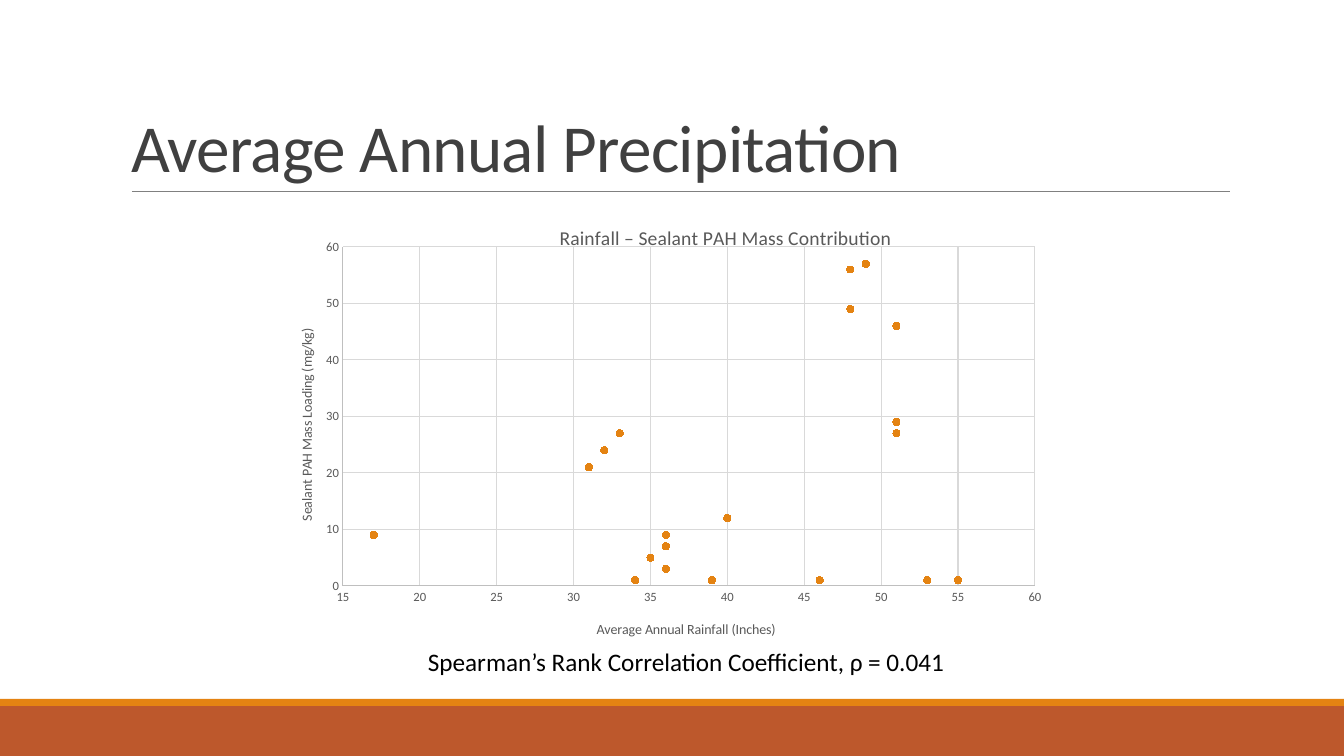
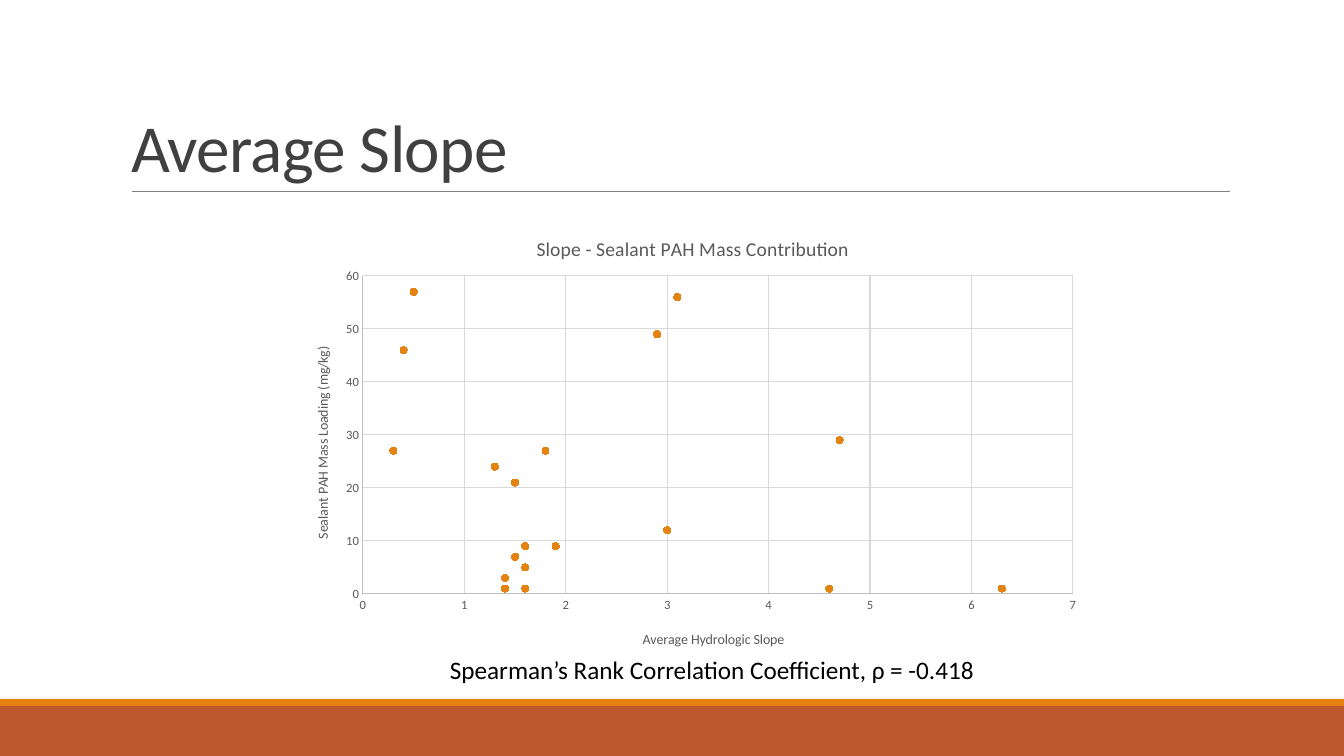
"""Build two slides that set sealant PAH loading against rainfall and slope."""
from lxml import etree
from pptx import Presentation
from pptx.chart.data import XyChartData
from pptx.dml.color import RGBColor
from pptx.enum.chart import XL_CHART_TYPE, XL_MARKER_STYLE, XL_TICK_MARK
from pptx.enum.shapes import MSO_CONNECTOR, MSO_SHAPE
from pptx.enum.text import MSO_ANCHOR, MSO_AUTO_SIZE, PP_ALIGN
from pptx.oxml.ns import qn
from pptx.util import Emu, Pt

SCATTER = XL_CHART_TYPE.XY_SCATTER
CIRCLE = XL_MARKER_STYLE.CIRCLE
NO_TICK = XL_TICK_MARK.NONE
STRAIGHT = MSO_CONNECTOR.STRAIGHT
RECTANGLE = MSO_SHAPE.RECTANGLE
BOTTOM = MSO_ANCHOR.BOTTOM
FIXED = MSO_AUTO_SIZE.NONE
GROW = MSO_AUTO_SIZE.SHAPE_TO_FIT_TEXT
LEFT = PP_ALIGN.LEFT

EMU_PER_PX = 914400 / 100.8
WIDTH, HEIGHT = 1344, 756
CHART_WIDTH, CHART_HEIGHT = 806, 454
TITLE_ONLY = 5

FONT = "Calibri"
RUST, ORANGE, RULE = "BD582C", "E48312", "808080"
HEADING, LABEL, BLACK = "404040", "595959", "000000"
AXIS, GRID = "BFBFBF", "D9D9D9"

LOADING = [12, 1, 49, 3, 21, 46, 5, 9, 7, 56, 57, 1, 27, 27, 24, 9, 1, 1, 1, 29]
RAINFALL = [40, 55, 48, 36, 31, 51, 35, 36, 36, 48, 49, 53, 33, 51, 32, 17, 46, 39, 34, 51]
SLOPE = [3, 4.6, 2.9, 1.4, 1.5, 0.4, 1.6, 1.9, 1.5, 3.1,
         0.5, 6.3, 1.8, 0.3, 1.3, 1.6, 6.3, 1.4, 1.6, 4.7]

STUDIES = [
    {
        "heading": "Average Annual Precipitation",
        "origin": (288, 204),
        "plot": (343, 247, 692, 339),
        "chart_title": ("Rainfall – Sealant PAH Mass Contribution", (556, 221)),
        "x_title": ("Average Annual Rainfall (Inches)", (594, 618)),
        "y_title": ("Sealant PAH Mass Loading (mg/kg)", (295, 326)),
        "x_scale": (15, 60, 5),
        "factor": RAINFALL,
        "caption": "Spearman’s Rank Correlation Coefficient, ρ = 0.041",
        "caption_at": (418, 641),
    },
    {
        "heading": "Average Slope",
        "origin": (287, 212),
        "plot": (363, 276, 710, 318),
        "chart_title": ("Slope - Sealant PAH Mass Contribution", (533, 232)),
        "x_title": ("Average Hydrologic Slope", (640, 628)),
        "y_title": ("Sealant PAH Mass Loading (mg/kg)", (311, 344)),
        "x_scale": (0, 7, 1),
        "factor": SLOPE,
        "caption": "Spearman’s Rank Correlation Coefficient, ρ = -0.418",
        "caption_at": (440, 649),
    },
]


def px(length):
    """Turn pixels into EMU."""
    return Emu(round(length * EMU_PER_PX))


def rgb(value):
    """Turn a hex string into a colour."""
    return RGBColor.from_string(value)


def manual_layout(parent, index, **settings):
    """Give a chart part a fixed layout."""
    for previous in parent.findall(qn("c:layout")):
        parent.remove(previous)
    layout = etree.Element(qn("c:layout"))
    manual = etree.SubElement(layout, qn("c:manualLayout"))
    for tag, value in settings.items():
        etree.SubElement(manual, qn(f"c:{tag}")).set("val", str(value))
    parent.insert(index, layout)


class Deck:
    """Hold the style and the current slide."""

    def __init__(self):
        """Open a presentation of the right size."""
        self.presentation = Presentation()
        self.presentation.slide_width = px(WIDTH)
        self.presentation.slide_height = px(HEIGHT)
        self.slide = None

    def start_slide(self, heading):
        """Add a slide with its bands, rule and title."""
        layout = self.presentation.slide_layouts[TITLE_ONLY]
        self.slide = self.presentation.slides.add_slide(layout)
        self.band(706, 50, RUST)
        self.band(699, 7, ORANGE)
        self.rule(132, 1230, 191)
        self.heading(heading)

    def styled_run(self, paragraph, text, size, color):
        """Add one styled run to a paragraph."""
        run = paragraph.add_run()
        run.text = text
        self.style(run.font, size, color)
        return run

    def style(self, font, size, color):
        """Set the shared typeface with a size and colour."""
        font.name, font.size, font.bold = FONT, Pt(size), False
        font.color.rgb = rgb(color)

    def heading(self, text):
        """Place and fill the title placeholder."""
        title = self.slide.shapes.title
        title.left, title.top, title.width, title.height = map(px, (121, 31, 1109, 160))
        frame = title.text_frame
        frame.word_wrap = True
        frame.auto_size = FIXED
        frame.vertical_anchor = BOTTOM
        paragraph = frame.paragraphs[0]
        paragraph.alignment = LEFT
        paragraph.line_spacing = 0.85
        run = self.styled_run(paragraph, text, 48, HEADING)
        run.font._element.set("spc", "-50")

    def band(self, top, height, color):
        """Draw a band across the slide."""
        band = self.slide.shapes.add_shape(RECTANGLE, 0, px(top), px(WIDTH), px(height))
        band.shadow.inherit = False
        band.fill.solid()
        band.fill.fore_color.rgb = rgb(color)
        band.line.fill.background()

    def rule(self, start, end, y):
        """Draw the thin line under the title."""
        rule = self.slide.shapes.add_connector(STRAIGHT, px(start), px(y), px(end), px(y))
        rule.line.color.rgb = rgb(RULE)
        rule.line.width = Pt(0.5)
        etree.SubElement(rule._element.spPr, qn("a:effectLst"))

    def caption(self, text, left, top):
        """Add the line of text below the chart."""
        caption = self.slide.shapes.add_textbox(px(left), px(top), px(581), px(40))
        caption.text_frame.word_wrap = True
        caption.text_frame.auto_size = GROW
        self.styled_run(caption.text_frame.paragraphs[0], text, 18, BLACK)

    def chart_label(self, title, wording, size, origin):
        """Put a chart or axis title at a fixed place."""
        text, (left, top) = wording
        self.styled_run(title.text_frame.paragraphs[0], text, size, LABEL)
        manual_layout(title._element, 1, xMode="edge", yMode="edge",
                      x=round((left - origin[0]) / CHART_WIDTH, 4),
                      y=round((top - origin[1]) / CHART_HEIGHT, 4))

    def axis(self, axis, scale, wording, origin):
        """Scale and format one axis."""
        axis.minimum_scale, axis.maximum_scale, axis.major_unit = scale
        axis.major_tick_mark = axis.minor_tick_mark = NO_TICK
        axis.has_major_gridlines = True
        for line, color in ((axis.format.line, AXIS), (axis.major_gridlines.format.line, GRID)):
            line.color.rgb = rgb(color)
            line.width = Pt(0.75)
        self.style(axis.tick_labels.font, 9, LABEL)
        axis.has_title = True
        self.chart_label(axis.axis_title, wording, 10, origin)

    def scatter(self, study):
        """Add the scatter chart of one study."""
        origin = study["origin"]
        data = XyChartData()
        points = data.add_series("Series 1")
        for factor, loading in zip(study["factor"], LOADING):
            points.add_data_point(factor, loading)
        frame = self.slide.shapes.add_chart(
            SCATTER, *map(px, (*origin, CHART_WIDTH, CHART_HEIGHT)), data)
        chart = frame.chart
        self.style(chart.font, 10, BLACK)
        chart.has_legend = False
        chart.has_title = True
        self.chart_label(chart.chart_title, study["chart_title"], 14, origin)
        self.axis(chart.category_axis, study["x_scale"], study["x_title"], origin)
        self.axis(chart.value_axis, (0, 60, 10), study["y_title"], origin)
        left, top, width, height = study["plot"]
        manual_layout(chart._chartSpace.chart.plotArea, 0,
                      layoutTarget="inner", xMode="edge", yMode="edge",
                      x=round((left - origin[0]) / CHART_WIDTH, 4),
                      y=round((top - origin[1]) / CHART_HEIGHT, 4),
                      w=round(width / CHART_WIDTH, 4),
                      h=round(height / CHART_HEIGHT, 4))
        plot = chart.plots[0]
        plot.vary_by_categories = False
        series = plot.series[0]
        series.smooth = False
        series.format.line.fill.background()
        marker = series.marker
        marker.style, marker.size = CIRCLE, 5
        marker.format.fill.solid()
        marker.format.fill.fore_color.rgb = rgb(ORANGE)
        marker.format.line.color.rgb = rgb(ORANGE)


def main():
    """Build and save the slides."""
    deck = Deck()
    for study in STUDIES:
        deck.start_slide(study["heading"])
        deck.scatter(study)
        deck.caption(study["caption"], *study["caption_at"])
    deck.presentation.save("out.pptx")


if __name__ == "__main__":
    main()
